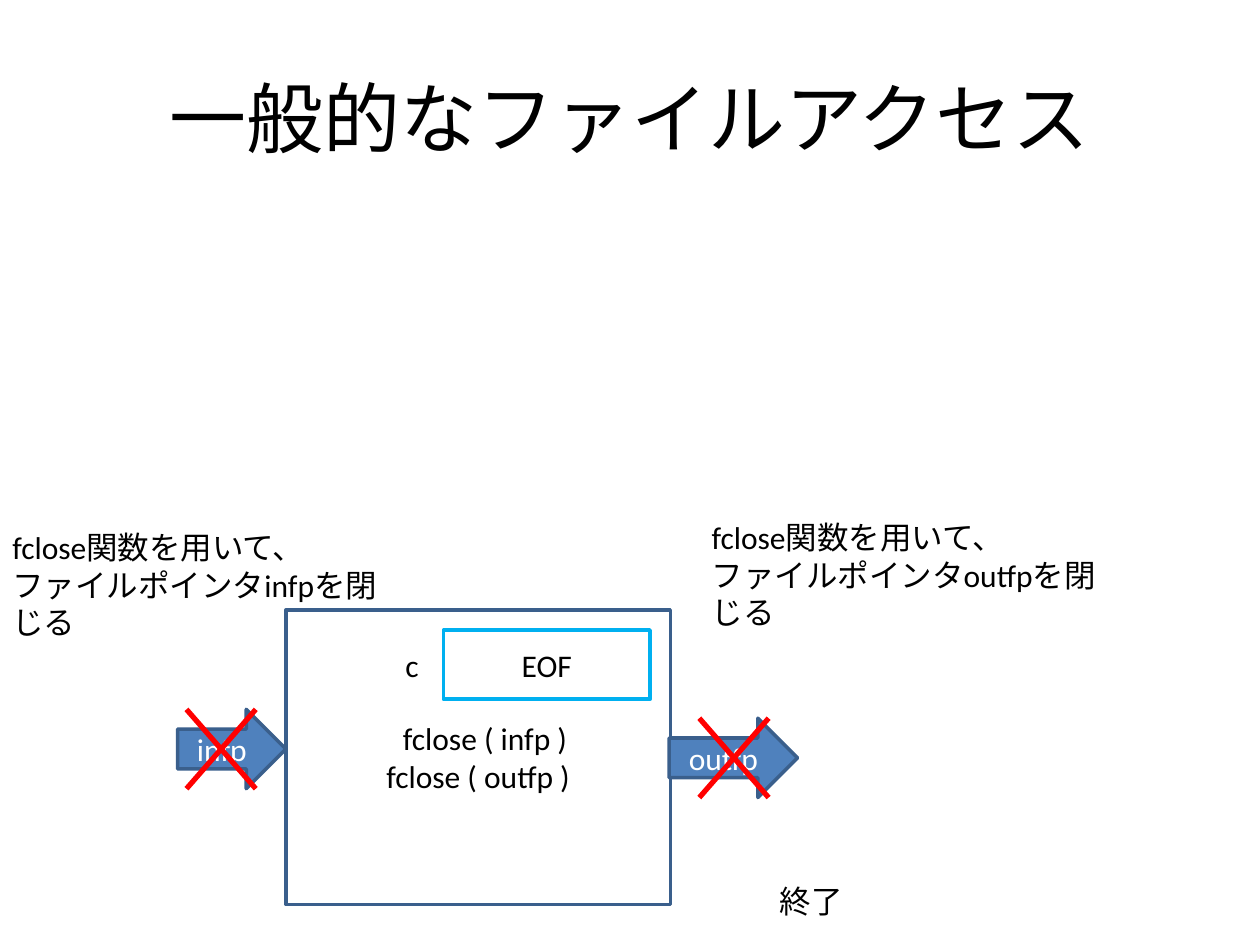
import dataclasses

import pptx
import pptx.dml.color
import pptx.enum.lang
import pptx.enum.shapes
import pptx.enum.text
import pptx.oxml
import pptx.oxml.ns
import pptx.util

COLS, ROWS = 100, 75
WIDE, HIGH = pptx.util.Inches(10), pptx.util.Inches(7.5)
KINDS = pptx.enum.shapes.MSO_SHAPE
ALIGN = pptx.enum.text.PP_ALIGN
ANCHOR = pptx.enum.text.MSO_ANCHOR


@dataclasses.dataclass(frozen=True)
class Theme:
    font: str = "Calibri"
    title: int = 44
    body: int = 18
    ink: str = "000000"
    light: str = "FFFFFF"
    fill: str = "4F81BD"
    edge: str = "3A5F8C"
    value: str = "00B0F0"
    cross: str = "FF0000"
    thin: int = 2
    thick: int = 3


THEME = Theme()


def tint(code):
    return pptx.dml.color.RGBColor.from_string(code)


def grid(x, y):
    return round(x * WIDE / COLS), round(y * HIGH / ROWS)


def place(box):
    x, y, w, h = box
    return *grid(x, y), *grid(w, h)


def write(shape, lines, color=THEME.ink, size=THEME.body, align=ALIGN.CENTER,
          anchor=ANCHOR.MIDDLE, wrap=True):
    frame = shape.text_frame
    frame.word_wrap = wrap
    frame.vertical_anchor = anchor
    for i, line in enumerate(lines):
        para = frame.add_paragraph() if i else frame.paragraphs[0]
        para.alignment = align
        run = para.add_run()
        run.text = line
        run.font.name = THEME.font
        run.font.size = pptx.util.Pt(size)
        run.font.color.rgb = tint(color)
        run.font.language_id = pptx.enum.lang.MSO_LANGUAGE_ID.JAPANESE


def add_text(slide, box, lines, **style):
    shape = slide.shapes.add_textbox(*place(box))
    write(shape, lines, **style)


def add_note(slide, box, lines, wrap=True):
    add_text(slide, box, lines, align=ALIGN.LEFT, anchor=ANCHOR.TOP, wrap=wrap)


def add_block(slide, kind, box, lines, edge=THEME.edge, fill=None, color=THEME.ink):
    shape = slide.shapes.add_shape(kind, *place(box))
    shape.shadow.inherit = False
    if fill:
        shape.fill.solid()
        shape.fill.fore_color.rgb = tint(fill)
    else:
        shape.fill.background()
    shape.line.color.rgb = tint(edge)
    shape.line.width = pptx.util.Pt(THEME.thin)
    write(shape, lines, color)
    return shape


def add_arrow(slide, box, label):
    add_block(slide, KINDS.RIGHT_ARROW, box, [label], fill=THEME.fill, color=THEME.light)


def add_cross(slide, box):
    x, y, w, h = box
    for start, end in ((x + w, x), (x, x + w)):
        line = slide.shapes.add_connector(
            pptx.enum.shapes.MSO_CONNECTOR.STRAIGHT, *grid(start, y), *grid(end, y + h))
        line.line.color.rgb = tint(THEME.cross)
        line.line.width = pptx.util.Pt(THEME.thick)
        props = line._element.spPr
        props.append(pptx.oxml.parse_xml(
            f"<a:effectLst {pptx.oxml.ns.nsdecls('a')}/>"))


def indent(shape, cols):
    props = shape.text_frame.paragraphs[0]._p.get_or_add_pPr()
    props.set("marL", str(grid(cols, 0)[0]))
    props.set("indent", "0")


def main():
    deck = pptx.Presentation()
    deck.slide_width, deck.slide_height = WIDE, HIGH
    slide = deck.slides.add_slide(deck.slide_layouts[6])

    add_text(slide, (5, 3, 90, 12.5), ["一般的なファイルアクセス"], size=THEME.title)
    calls = add_block(slide, KINDS.RECTANGLE, (22.7, 48.4, 30.5, 23.4),
                      ["fclose ( infp )", "fclose ( outfp )"])
    indent(calls, 1.1)
    add_block(slide, KINDS.RECTANGLE, (35.2, 50, 16.4, 5.5), ["EOF"], edge=THEME.value)
    add_note(slide, (31.2, 50.8, 3.7, 4), ["c"], wrap=False)

    files = (
        ("infp", (14.1, 56.3, 8.6, 6.3), (14.8, 56.3, 5.5, 6.3), (0, 41.4, 31.9, 7.1)),
        ("outfp", (53.1, 57, 10.2, 6.3), (55.5, 57, 5.5, 6.3), (55.5, 40.6, 33.6, 7.1)),
    )
    for name, arrow, cross, note in files:
        add_arrow(slide, arrow, name)
        add_cross(slide, cross)
        add_note(slide, note, ["fclose関数を用いて、", f"ファイルポインタ{name}を閉じる"])

    add_note(slide, (60.9, 69.5, 7.1, 4), ["終了"], wrap=False)
    deck.save("out.pptx")


if __name__ == "__main__":
    main()
